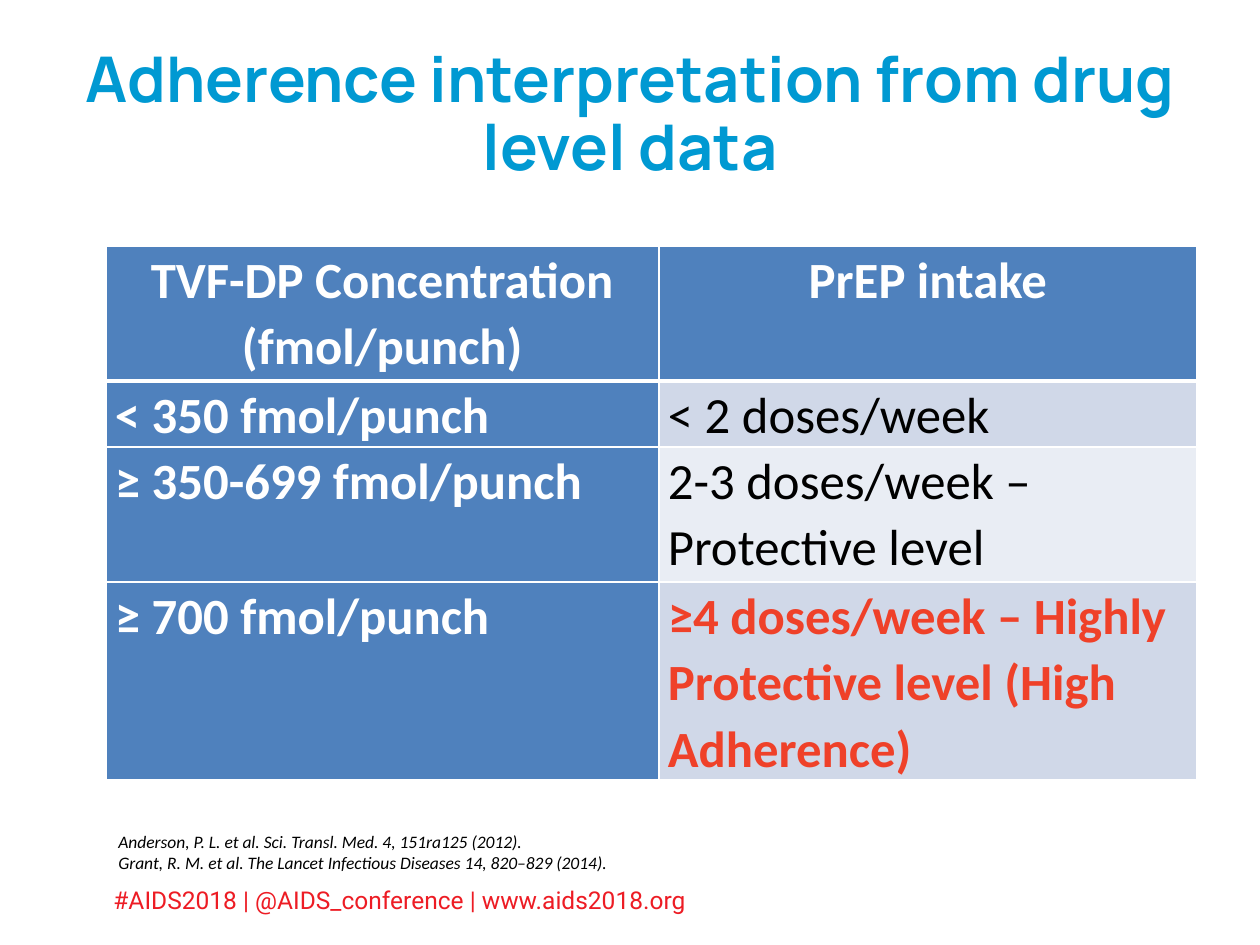
from lxml import etree
from pptx import Presentation
from pptx.dml.color import RGBColor
from pptx.enum.text import MSO_ANCHOR, PP_ALIGN
from pptx.oxml.ns import qn
from pptx.util import Emu, Pt

CENTER, LEFT = PP_ALIGN.CENTER, PP_ALIGN.LEFT
MIDDLE, TOP = MSO_ANCHOR.MIDDLE, MSO_ANCHOR.TOP
PX_PER_INCH = 126
WHITE, BLACK, BLUE = "FFFFFF", "000000", "4F81BD"
PALE_ODD, PALE_EVEN, HIGHLIGHT = "D0D8E8", "E9EDF4", "EF4129"
COLUMN_WIDTHS = (553, 538)
ROW_HEIGHTS = (135, 66, 135, 198)
HEADINGS = ("TVF-DP Concentration (fmol/punch)", "PrEP intake")
LEVELS = (
    ("< 350 fmol/punch", "< 2 doses/week", BLACK),
    ("≥ 350-699 fmol/punch", "2-3 doses/week – Protective level", BLACK),
    ("≥ 700 fmol/punch", "≥4 doses/week – Highly Protective level (High Adherence)", HIGHLIGHT),
)
REFERENCES = (
    "Anderson, P. L. et al. Sci. Transl. Med. 4, 151ra125 (2012).",
    "Grant, R. M. et al. The Lancet Infectious Diseases 14, 820–829 (2014).",
)


def px(length):
    """Turn pixels into EMU."""
    return Emu(round(length * 914400 / PX_PER_INCH))


def color(value):
    """Turn a hex string into a colour."""
    return RGBColor.from_string(value)


def style(paragraph, name, size, ink, bold=False, italic=False, align=LEFT, spacing=1.0):
    """Set the font and layout of a paragraph."""
    paragraph.alignment = align
    paragraph.line_spacing = spacing
    font = paragraph.font
    font.name, font.size = name, Pt(size)
    font.bold, font.italic = bold, italic
    font.color.rgb = color(ink)


def add_text(slide, box, lines, name, size, ink, anchor=TOP, **options):
    """Add a wrapped text box with one paragraph per line."""
    frame = slide.shapes.add_textbox(*map(px, box)).text_frame
    frame.word_wrap = True
    frame.vertical_anchor = anchor
    frame.text = "\n".join(lines)
    for paragraph in frame.paragraphs:
        style(paragraph, name, size, ink, **options)


def add_borders(cell, bottom):
    """Draw white borders ahead of the cell's fill."""
    properties = cell._tc.get_or_add_tcPr()
    widths = {"a:lnL": 1, "a:lnR": 1, "a:lnT": 1, "a:lnB": bottom}
    for position, (tag, width) in enumerate(widths.items()):
        line = etree.Element(qn(tag), w=str(Pt(width)))
        fill = etree.SubElement(line, qn("a:solidFill"))
        etree.SubElement(fill, qn("a:srgbClr"), val=WHITE)
        properties.insert(position, line)


def fill_cell(cell, text, background, ink=WHITE, bold=True, align=LEFT, bottom=1):
    """Write and colour one table cell."""
    cell.margin_left = cell.margin_right = px(9)
    cell.margin_top = cell.margin_bottom = 0
    cell.text = text
    style(cell.text_frame.paragraphs[0], "Calibri", 29, ink, bold, align=align, spacing=1.07)
    cell.fill.solid()
    cell.fill.fore_color.rgb = color(background)
    add_borders(cell, bottom)


def add_levels_table(slide):
    """Add the table of drug levels and intake."""
    table = slide.shapes.add_table(
        len(ROW_HEIGHTS), len(COLUMN_WIDTHS), px(106), px(246),
        px(sum(COLUMN_WIDTHS)), px(sum(ROW_HEIGHTS))).table
    for column, width in zip(table.columns, COLUMN_WIDTHS):
        column.width = px(width)
    for row, height in zip(table.rows, ROW_HEIGHTS):
        row.height = px(height)
    for index, heading in enumerate(HEADINGS):
        fill_cell(table.cell(0, index), heading, BLUE, align=CENTER, bottom=3)
    for index, (concentration, intake, ink) in enumerate(LEVELS, 1):
        fill_cell(table.cell(index, 0), concentration, BLUE, bottom=1)
        fill_cell(table.cell(index, 1), intake, PALE_ODD if index % 2 else PALE_EVEN,
                  ink, bold=ink == HIGHLIGHT)


def main():
    """Build and save the slide."""
    deck = Presentation()
    deck.slide_width, deck.slide_height = px(1260), px(945)
    slide = deck.slides.add_slide(deck.slide_layouts[6])
    add_text(slide, (101, 879, 915, 43), ["#AIDS2018 | @AIDS_conference |\u00a0www.aids2018.org".replace("\u00a0", " ")],
             "Roboto", 14, "ED1C24")
    add_text(slide, (63, 38, 1134, 157), ["Adherence interpretation from drug level data"],
             "Manrope", 36, "0099D2", MIDDLE, bold=True, align=CENTER, spacing=0.9)
    add_levels_table(slide)
    add_text(slide, (106, 825, 1134, 55), REFERENCES, "Calibri", 10, BLACK, italic=True)
    deck.save("out.pptx")


if __name__ == "__main__":
    main()
